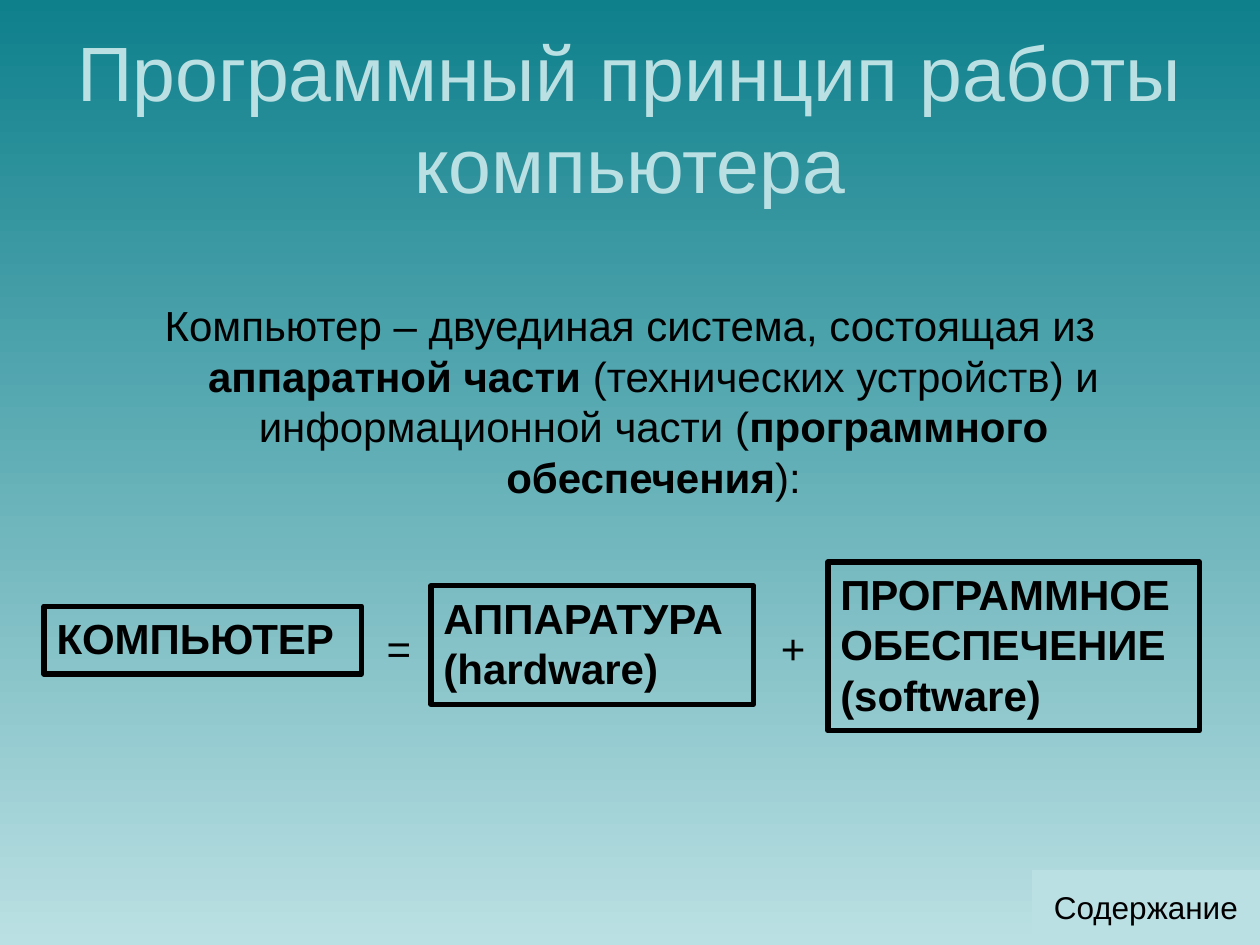
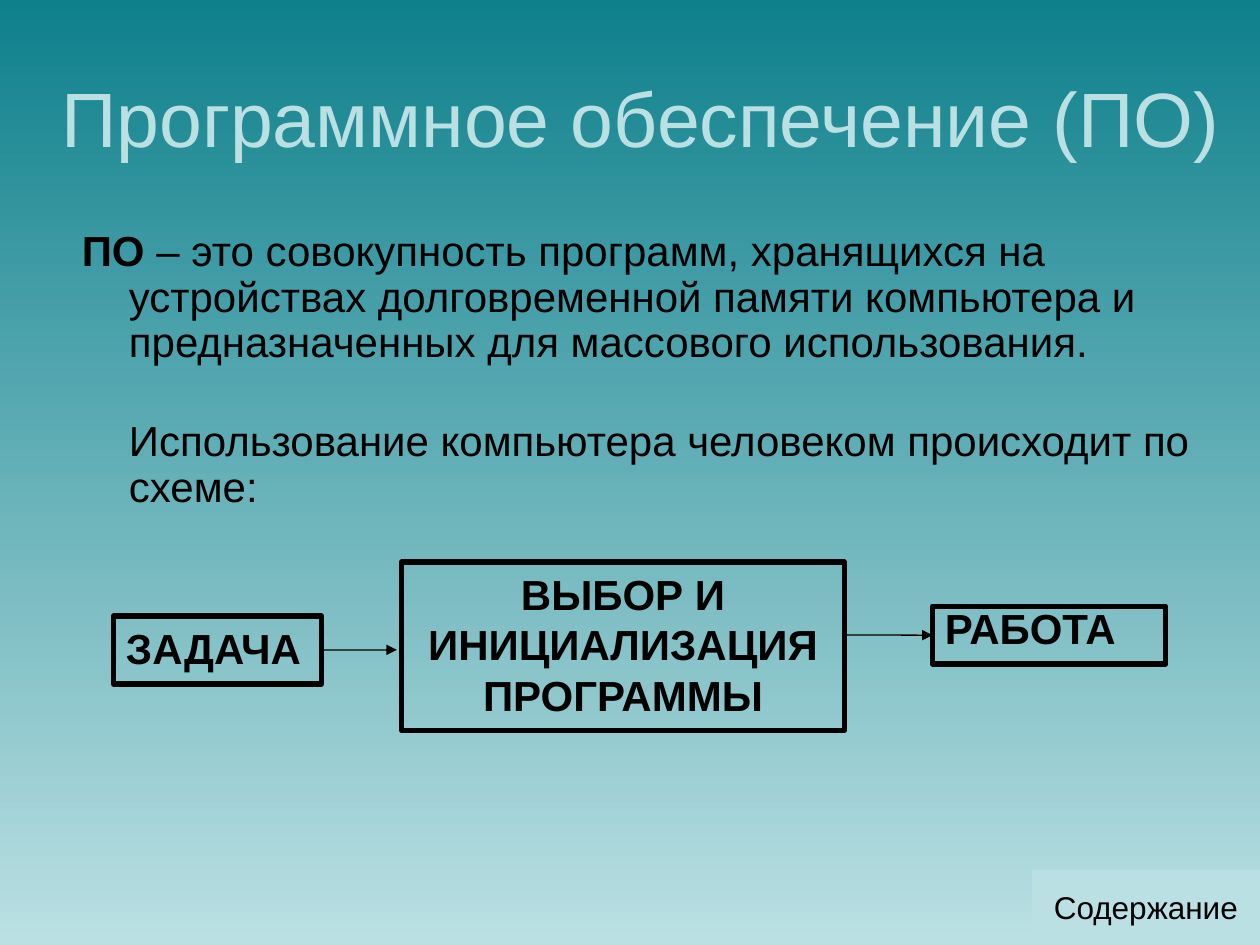
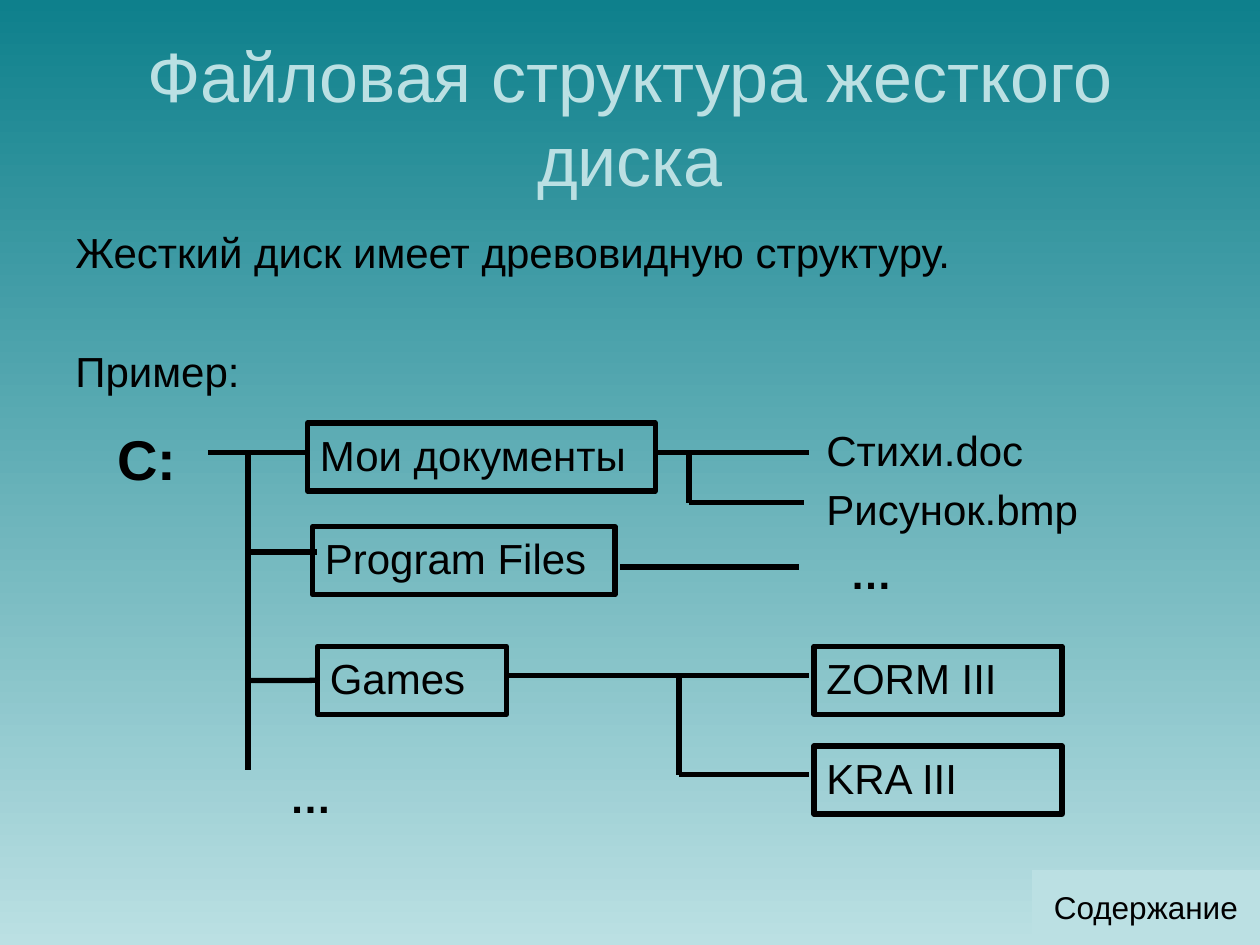
from lxml import etree
from pptx import Presentation
from pptx.dml.color import RGBColor
from pptx.enum.shapes import MSO_CONNECTOR, MSO_SHAPE
from pptx.enum.text import MSO_ANCHOR, MSO_AUTO_SIZE, PP_ALIGN
from pptx.oxml.ns import qn
from pptx.util import Cm, Pt

STRAIGHT = MSO_CONNECTOR.STRAIGHT
RECT = MSO_SHAPE.RECTANGLE
BUTTON = MSO_SHAPE.ACTION_BUTTON_CUSTOM
MIDDLE, TOP = MSO_ANCHOR.MIDDLE, MSO_ANCHOR.TOP
GROW, FIXED = MSO_AUTO_SIZE.SHAPE_TO_FIT_TEXT, MSO_AUTO_SIZE.NONE
LEFT, CENTER = PP_ALIGN.LEFT, PP_ALIGN.CENTER

DEEP, PALE, BLACK = "0E808C", "BBE0E3", "000000"
FONT = "Arial"
HANG = 0.95
ROW = 1.37


def color(code):
    return RGBColor.from_string(code)


def setup(deck):
    deck.slide_width, deck.slide_height = Cm(25.4), Cm(19.05)
    fill = deck.slide_master.background.fill
    fill.gradient()
    fill.gradient_angle = 270
    for stop, code in zip(fill.gradient_stops, (DEEP, PALE)):
        stop.color.rgb = color(code)


def assign(item, values):
    for name, value in values.items():
        setattr(item, name, value)


def write(shape, texts, size=24, ink=BLACK, bold=False, align=LEFT,
          anchor=TOP, wrap=True, fit=FIXED, gap=0, line=None, hang=None):
    frame = shape.text_frame
    assign(frame, {"word_wrap": wrap, "auto_size": fit,
                   "vertical_anchor": anchor})
    for i, text in enumerate(texts):
        para = frame.paragraphs[0] if i == 0 else frame.add_paragraph()
        assign(para, {"alignment": align, "line_spacing": line,
                      "space_before": Pt(gap if i else 0)})
        if hang:
            props = para._p.get_or_add_pPr()
            props.set("marL", str(Cm(HANG)))
            props.set("indent", str(Cm(-hang[i])))
        for j, part in enumerate(text.split("*")):
            if part:
                run = para.add_run()
                run.text = part
                assign(run.font, {"name": FONT, "size": Pt(size),
                                  "bold": bold or j % 2 == 1})
                run.font.color.rgb = color(ink)


def label(slide, area, *texts, **style):
    shape = slide.shapes.add_textbox(*map(Cm, area))
    write(shape, texts, **style)


def box(slide, area, text, **style):
    shape = slide.shapes.add_shape(RECT, *map(Cm, area))
    shape.shadow.inherit = False
    shape.fill.background()
    shape.line.color.rgb = color(BLACK)
    shape.line.width = Pt(3)
    write(shape, [text], fit=GROW, **style)
    return shape


def link(slide, x1, y1, x2, y2, width=3, start=None, end=None, arrow=False):
    wire = slide.shapes.add_connector(STRAIGHT, *map(Cm, (x1, y1, x2, y2)))
    wire.line.color.rgb = color(BLACK)
    wire.line.width = Pt(width)
    if arrow:
        tail = etree.SubElement(wire.line._get_or_add_ln(), qn("a:tailEnd"))
        tail.set("type", "triangle")
    etree.SubElement(wire._element.spPr, qn("a:effectLst"))
    if start:
        wire.begin_connect(start, 3)
    if end:
        wire.end_connect(end, 1)


def page(deck, title, size=44, left=1.27, width=22.86):
    slide = deck.slides.add_slide(deck.slide_layouts[6])
    label(slide, (left, 0.76, width, 3.18), title, size=size, ink=PALE,
          align=CENTER, anchor=MIDDLE)
    shape = slide.shapes.add_shape(BUTTON, *map(Cm, (20.8, 17.53, 4.6, 1.52)))
    shape.shadow.inherit = False
    shape.fill.solid()
    shape.fill.fore_color.rgb = color(PALE)
    shape.line.fill.background()
    write(shape, ["Содержание"], size=18, align=CENTER, anchor=MIDDLE,
          wrap=False)
    return slide


def parts(deck):
    slide = page(deck, "Программный принцип работы компьютера")
    label(slide, (1.27, 5.92, 22.86, 4.19),
          "Компьютер – двуединая система, состоящая из *аппаратной части* "
          "(технических устройств) и информационной части (*программного "
          "обеспечения*):", align=CENTER, hang=[HANG])
    for area, text in (
            ((0.89, 12.22, 6.4, ROW), "КОМПЬЮТЕР"),
            ((8.69, 11.81, 6.5, 2.39), "АППАРАТУРА (hardware)"),
            ((16.69, 11.33, 7.49, 3.4), "ПРОГРАММНОЕ ОБЕСПЕЧЕНИЕ (software)")):
        box(slide, area, text, bold=True)
    for left, width, sign in ((7.29, 1.5, "="), (15.19, 1.6, "+")):
        label(slide, (left, 12.42, width, 1.27), sign, align=CENTER)


def scheme(deck):
    slide = page(deck, "Программное обеспечение (ПО)", left=0.86, width=24.13)
    label(slide, (1.4, 4.52, 22.86, 6.5),
          "*ПО* – это совокупность программ, хранящихся на устройствах "
          "долговременной памяти компьютера и предназначенных для массового "
          "использования.",
          "Использование компьютера человеком происходит по схеме:",
          line=0.9, gap=31, hang=[HANG, 0])
    task = box(slide, (2.29, 12.42, 4.19, ROW), "ЗАДАЧА", bold=True)
    box(slide, (8.1, 11.33, 8.92, 3.4), "ВЫБОР И ИНИЦИАЛИЗАЦИЯ ПРОГРАММЫ",
        bold=True, align=CENTER)
    work = box(slide, (18.8, 12.22, 4.7, 1.17), "РАБОТА", bold=True, line=0.8)
    link(slide, 6.48, 13.1, 8, 13.1, width=0.75, start=task, arrow=True)
    link(slide, 17, 12.8, 18.8, 12.8, width=0.75, end=work, arrow=True)


def tree(deck):
    slide = page(deck, "Файловая структура жесткого диска", size=40)
    label(slide, (1.27, 4.45, 22.86, 4.09),
          "Жесткий диск имеет древовидную структуру.", "Пример:",
          gap=39, hang=[HANG, HANG])
    label(slide, (2.11, 8.43, 2.11, 1.6), "С:", size=32, bold=True)
    for area, text in (
            ((6.2, 8.53, 7.01, ROW), "Мои документы"),
            ((6.3, 10.62, 6.1, ROW), "Program Files"),
            ((16.41, 13.03, 5, ROW), "ZORM III"),
            ((16.41, 15.04, 5, ROW), "KRA III")):
        box(slide, area, text)
    games = box(slide, (6.4, 13.03, 3.81, ROW), "Games")
    for left, top, width, text, bold in (
            (16.41, 8.43, 4.7, "Стихи.doc", False),
            (16.41, 9.63, 5.69, "Рисунок.bmp", False),
            (16.89, 10.92, 4.09, "…", True),
            (5.59, 15.42, 2.59, "…", True)):
        label(slide, (left, top, width, 1.27), text, bold=bold)
    for x1, x2, y in (
            (4.19, 6.2, 9.12), (5, 6.4, 11.13),
            (13.21, 16.31, 9.12), (13.89, 16.21, 10.13), (12.5, 16.1, 11.43),
            (10.21, 16.31, 13.61), (13.69, 16.31, 15.62)):
        link(slide, x1, y, x2, y)
    for x, y1, y2 in (
            (5, 9.12, 15.52), (13.89, 9.12, 10.13), (13.69, 13.61, 15.62)):
        link(slide, x, y1, x, y2)
    link(slide, 5, 13.72, 6.4, 13.72, end=games)


def main():
    deck = Presentation()
    setup(deck)
    for build in (parts, scheme, tree):
        build(deck)
    deck.save("out.pptx")


if __name__ == "__main__":
    main()
